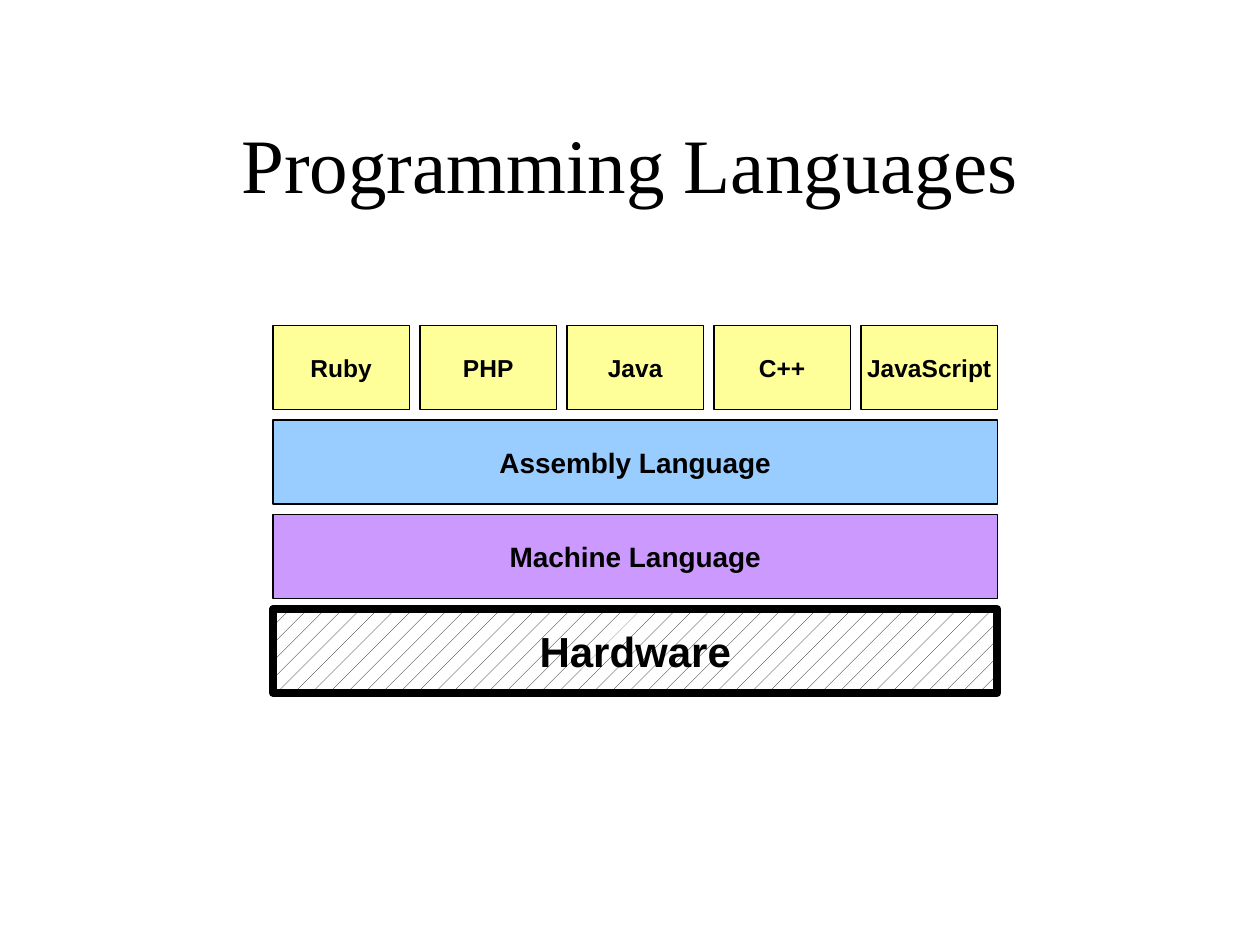
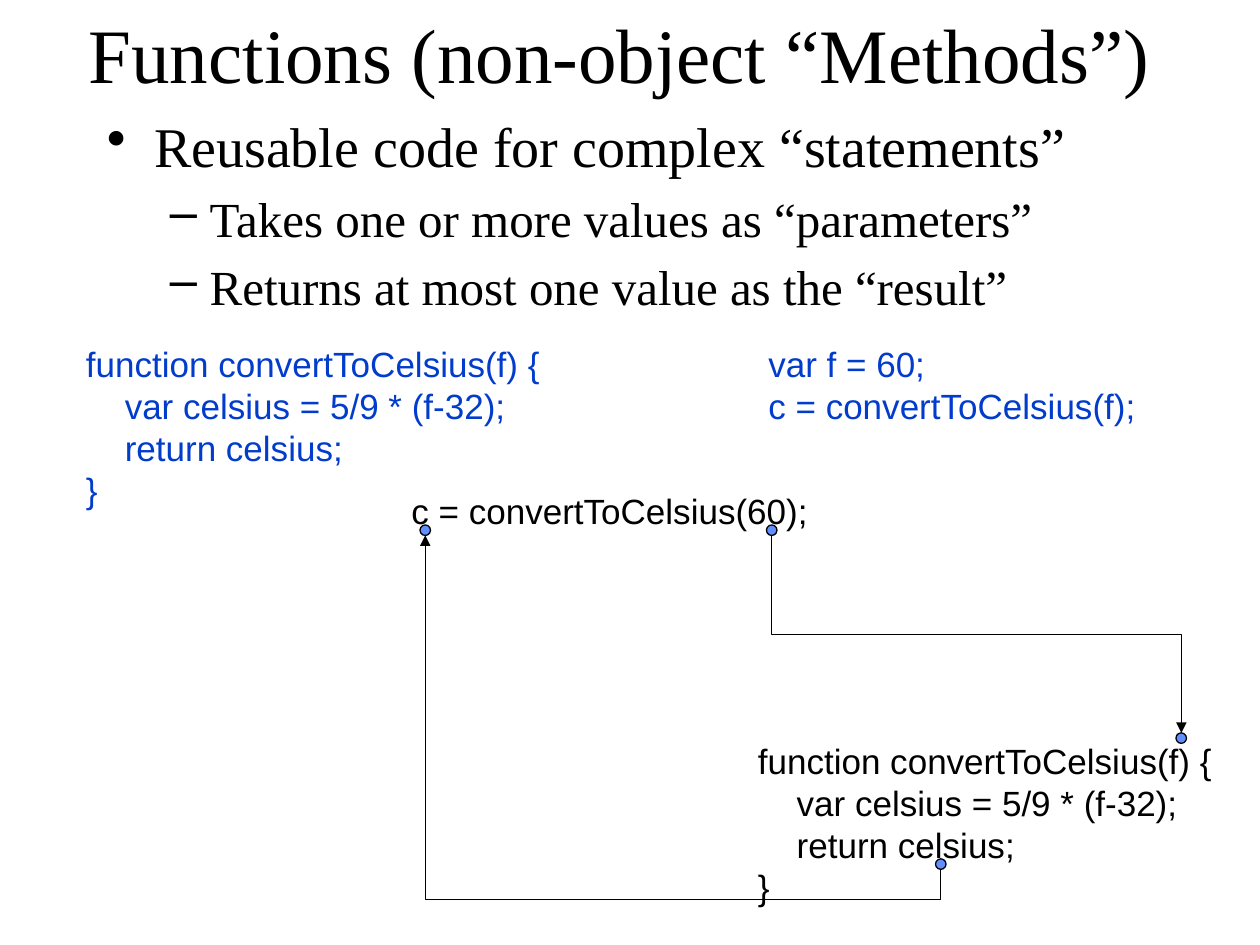
from lxml.etree import SubElement
from pptx import Presentation
from pptx.dml.color import RGBColor
from pptx.enum.dml import MSO_PATTERN
from pptx.enum.shapes import MSO_CONNECTOR, MSO_SHAPE
from pptx.enum.text import MSO_ANCHOR, MSO_AUTO_SIZE, PP_ALIGN
from pptx.oxml.ns import qn
from pptx.util import Emu, Pt

PX = 7620
SERIF, SANS = "Times New Roman", "Arial"
BLACK, WHITE, BLUE, DOT_BLUE = "000000", "FFFFFF", "023CCC", "618FFD"
YELLOW, SKY, VIOLET = "FFFF99", "99CCFF", "CC99FF"

STACK_LEFT, STACK_TOP, STACK_WIDTH = 260, 310, 690
LAYER_HEIGHT, GAP = 80, 10
LAYERS = [
    (["Ruby", "PHP", "Java", "C++", "JavaScript"], YELLOW, 14, 0.75),
    (["Assembly Language"], SKY, 16, 0.75),
    (["Machine Language"], VIOLET, 16, 0.75),
    (["Hardware"], None, 24, 4.5),
]

BULLETS = [
    (0, "Reusable code for complex “statements”"),
    (1, "Takes one or more values as “parameters”"),
    (1, "Returns at most one value as the “result”"),
]
BULLET_LEVELS = [("•", 32, 45, 45), ("–", 28, 98, 38)]

CODE_INDENT = 37
FUNCTION = [
    (0, "function convertToCelsius(f) {"),
    (1, "var celsius = 5/9 * (f-32);"),
    (1, "return celsius;"),
    (0, "}"),
]
CALLER = [(0, "var f = 60;"), (0, "c = convertToCelsius(f);")]
CALL = [(0, "c = convertToCelsius(60);")]
SNIPPETS = [
    (FUNCTION, (70, 320, 460, 172), BLUE),
    (CALL, (380, 460, 404, 52), BLACK),
    (FUNCTION, (710, 698, 460, 172), BLACK),
    (CALLER, (720, 320, 377, 92), BLUE),
]

DOT = 10
ARGUMENT, PARAMETER = (735, 500), (1125, 698)
RETURNED, ASSIGNED = (896, 818), (405, 500)


def px(n):
    return Emu(round(n * PX))


def rgb(value):
    return RGBColor.from_string(value)


def write(tf, text, first=False, size=20, font=SANS, color=BLACK, bold=False,
          align=PP_ALIGN.LEFT, margin=0, hanging=0, bullet=None):
    p = tf.paragraphs[0] if first else tf.add_paragraph()
    p.alignment = align
    r = p.add_run()
    r.text = text
    r.font.size, r.font.name, r.font.bold = Pt(size), font, bold
    r.font.color.rgb = rgb(color)
    pPr = p._p.get_or_add_pPr()
    pPr.set("marL", str(px(margin)))
    pPr.set("indent", str(px(-hanging)))
    if bullet:
        before = SubElement(pPr, qn("a:spcBef"))
        SubElement(before, qn("a:spcPct"), val="20000")
        SubElement(pPr, qn("a:buChar"), char=bullet)


def add_text_box(s, box, wrap=True):
    tf = s.shapes.add_textbox(*map(px, box)).text_frame
    tf.word_wrap = wrap
    return tf


def add_title(s, text, box):
    tf = add_text_box(s, box)
    tf.vertical_anchor = MSO_ANCHOR.MIDDLE
    write(tf, text, first=True, size=44, font=SERIF, align=PP_ALIGN.CENTER)


def add_outlined(s, preset, box, fill, weight=0.75):
    sp = s.shapes.add_shape(preset, *map(px, box))
    sp.shadow.inherit = False
    if fill:
        sp.fill.solid()
        sp.fill.fore_color.rgb = rgb(fill)
    else:
        sp.fill.patterned()
        sp.fill.pattern = MSO_PATTERN.PERCENT_5
        sp.fill.fore_color.rgb = rgb(BLACK)
        sp.fill.back_color.rgb = rgb(WHITE)
    sp.line.color.rgb = rgb(BLACK)
    sp.line.width = Pt(weight)
    return sp


def add_layer(s, row, names, fill, size, weight):
    width = (STACK_WIDTH - GAP * (len(names) - 1)) / len(names)
    top = STACK_TOP + row * (LAYER_HEIGHT + GAP)
    for i, name in enumerate(names):
        left = STACK_LEFT + i * (width + GAP)
        sp = add_outlined(s, MSO_SHAPE.RECTANGLE,
                          (left, top, width, LAYER_HEIGHT), fill, weight)
        tf = sp.text_frame
        tf.word_wrap = False
        tf.vertical_anchor = MSO_ANCHOR.MIDDLE
        write(tf, name, first=True, size=size, bold=True,
              align=PP_ALIGN.CENTER)


def add_code(s, lines, box, color):
    tf = add_text_box(s, box, wrap=False)
    tf.auto_size = MSO_AUTO_SIZE.SHAPE_TO_FIT_TEXT
    for i, (level, line) in enumerate(lines):
        write(tf, line, first=i == 0, color=color, margin=level * CODE_INDENT)


def add_dot(s, center, top):
    add_outlined(s, MSO_SHAPE.OVAL, (center - DOT / 2, top, DOT, DOT), DOT_BLUE)


def add_elbow(s, start, end, bend):
    (x1, y1), (x2, y2) = start, end
    width, height = abs(y2 - y1), abs(x2 - x1)
    left, top = (x1 + x2 - width) / 2, (y1 + y2 - height) / 2
    c = s.shapes.add_connector(MSO_CONNECTOR.ELBOW, px(left), px(top),
                               px(left + width), px(top + height))
    c.line.color.rgb = rgb(BLACK)
    c.line.width = Pt(0.75)
    spPr = c._element.spPr
    xfrm = spPr.find(qn("a:xfrm"))
    xfrm.set("rot", str(270 * 60000))
    xfrm.set("flipH" if y2 > y1 else "flipV", "1")
    guides = spPr.find(qn("a:prstGeom")).find(qn("a:avLst"))
    SubElement(guides, qn("a:gd"), name="adj1", fmla=f"val {round(bend * 100000)}")
    SubElement(spPr.find(qn("a:ln")), qn("a:tailEnd"), type="triangle")
    SubElement(spPr, qn("a:effectLst"))


def below(dot):
    return dot[0], dot[1] + DOT


def build_languages(s):
    add_title(s, "Programming Languages", (90, 80, 1020, 150))
    for row, layer in enumerate(LAYERS):
        add_layer(s, row, *layer)


def build_functions(s):
    add_title(s, "Functions (non-object “Methods”)", (60, 0, 1060, 100))
    tf = add_text_box(s, (90, 100, 1020, 540))
    for i, (level, text) in enumerate(BULLETS):
        bullet, size, margin, hanging = BULLET_LEVELS[level]
        write(tf, text, first=i == 0, size=size, font=SERIF,
              margin=margin, hanging=hanging, bullet=bullet)
    for snippet in SNIPPETS:
        add_code(s, *snippet)
    add_elbow(s, below(ARGUMENT), PARAMETER, 0.5)
    add_elbow(s, below(RETURNED), below(ASSIGNED), -0.09)
    for dot in (ARGUMENT, PARAMETER, RETURNED, ASSIGNED):
        add_dot(s, *dot)


def main():
    prs = Presentation()
    prs.slide_width, prs.slide_height = px(1200), px(900)
    for build in (build_languages, build_functions):
        build(prs.slides.add_slide(prs.slide_layouts[6]))
    prs.save("out.pptx")


if __name__ == "__main__":
    main()
